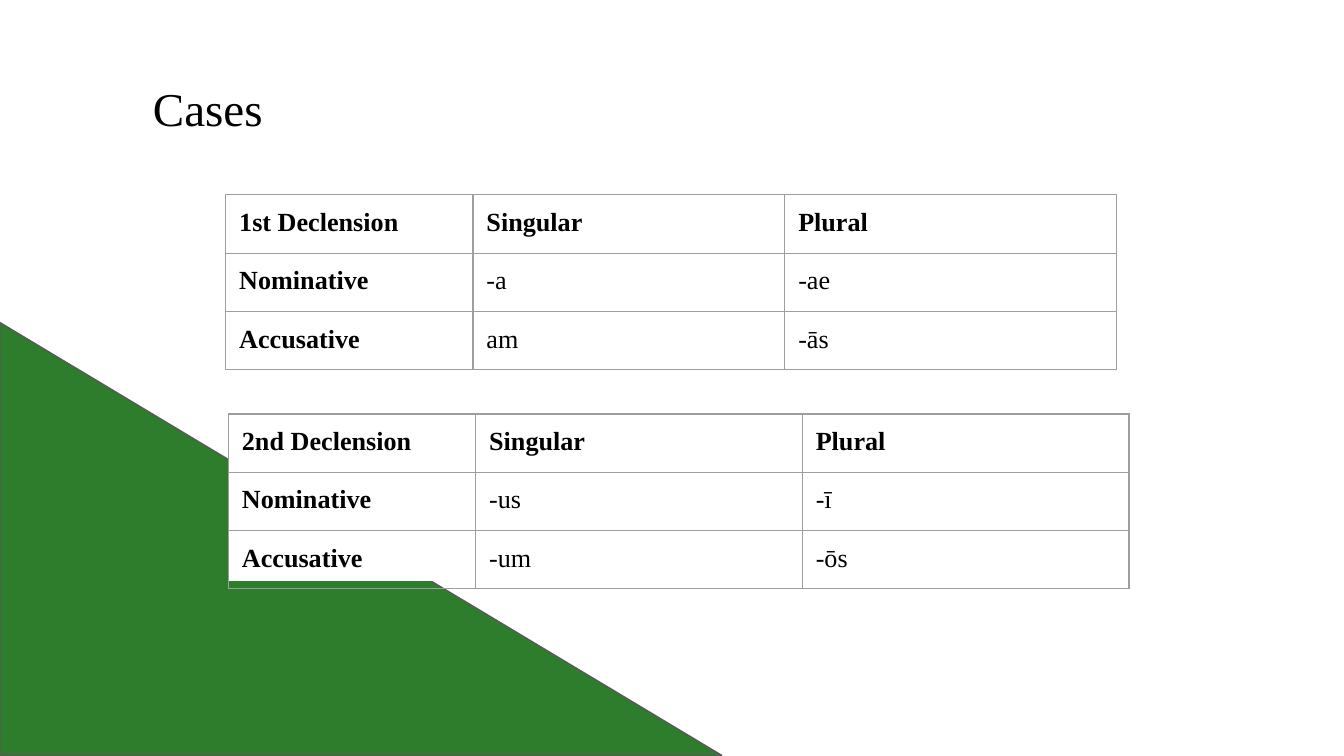
from lxml import etree
from pptx import Presentation
from pptx.dml.color import RGBColor
from pptx.enum.shapes import MSO_SHAPE
from pptx.enum.text import MSO_ANCHOR
from pptx.oxml.ns import qn
from pptx.util import Inches, Pt

TRIANGLE = MSO_SHAPE.RIGHT_TRIANGLE
RECT = MSO_SHAPE.RECTANGLE
MIDDLE = MSO_ANCHOR.MIDDLE
TOP = MSO_ANCHOR.TOP

COLORS = {"green": "2D7D2D", "edge": "595959", "white": "FFFFFF",
          "text": "000000", "grid": "9E9E9E"}
FONT = "Times New Roman"
PAD = Inches(0.1)
ROW = 0.43

FIRST = [["1st Declension", "Singular", "Plural"],
         ["Nominative", "-a", "-ae"],
         ["Accusative", "am", "-ās"]]
SECOND = [["2nd Declension", "Singular", "Plural"],
          ["Nominative", "-us", "-ī"],
          ["Accusative", "-um", "-ōs"]]


def color(name):
    return RGBColor.from_string(COLORS[name])


def style(para, size, bold=False):
    para.font.name = FONT
    para.font.size = Pt(size)
    para.font.bold = bold
    para.font.color.rgb = color("text")


def pad(item):
    item.margin_left = item.margin_right = PAD
    item.margin_top = item.margin_bottom = PAD


def add_block(slide, kind, box, fill, line):
    block = slide.shapes.add_shape(kind, *map(Inches, box))
    block.shadow.inherit = False
    block.fill.solid()
    block.fill.fore_color.rgb = color(fill)
    block.line.color.rgb = color(line)
    block.line.width = Pt(0.75)


def add_title(slide, box, text):
    frame = slide.shapes.add_textbox(*map(Inches, box)).text_frame
    frame.word_wrap = True
    frame.vertical_anchor = MIDDLE
    pad(frame)
    frame.text = text
    style(frame.paragraphs[0], 25.2)


def add_borders(cell):
    props = cell._tc.get_or_add_tcPr()
    # Border lines must come before the fill
    for spot, side in enumerate(("a:lnL", "a:lnR", "a:lnT", "a:lnB")):
        line = etree.Element(qn(side), w=str(Pt(0.75)))
        fill = etree.SubElement(line, qn("a:solidFill"))
        etree.SubElement(fill, qn("a:srgbClr"), val=COLORS["grid"])
        props.insert(spot, line)


def add_cases(slide, left, top, widths, rows):
    box = (left, top, sum(widths), ROW * len(rows))
    table = slide.shapes.add_table(len(rows), len(widths),
                                   *map(Inches, box)).table
    table.first_row = table.horz_banding = False
    for col, width in zip(table.columns, widths):
        col.width = Inches(width)
    for r, row in enumerate(rows):
        table.rows[r].height = Inches(ROW)
        for c, text in enumerate(row):
            cell = table.cell(r, c)
            cell.text = text
            cell.vertical_anchor = TOP
            pad(cell)
            cell.fill.background()
            style(cell.text_frame.paragraphs[0], 14, r == 0 or c == 0)
            add_borders(cell)


def main():
    prs = Presentation()
    # Widescreen, 16 to 9
    prs.slide_width = Inches(10)
    prs.slide_height = prs.slide_width * 9 // 16
    slide = prs.slides.add_slide(prs.slide_layouts[6])

    # Green corner, and the white panel behind the second table
    add_block(slide, TRIANGLE, (0, 2.4, 5.37, 3.22), "green", "edge")
    add_block(slide, RECT, (1.7, 3.07, 6.69, 1.25), "white", "white")

    # Title and the two declension tables
    add_title(slide, (1.04, 0.49, 3.34, 0.63), "Cases")
    add_cases(slide, 1.68, 1.45, (1.84, 2.32, 2.47), FIRST)
    add_cases(slide, 1.7, 3.08, (1.84, 2.43, 2.43), SECOND)

    prs.save("out.pptx")


if __name__ == "__main__":
    main()
